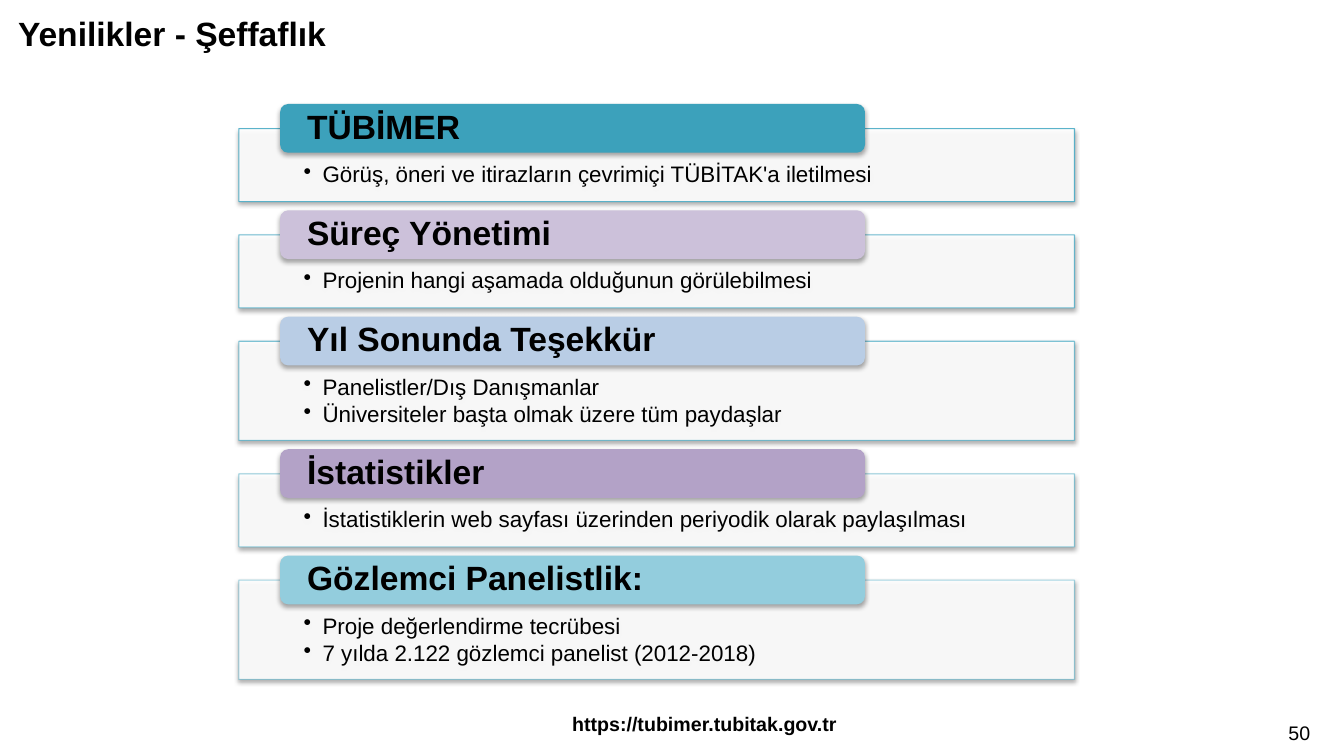
"""Build the transparency slide: five headed panels under a title."""
from lxml import etree
from pptx import Presentation
from pptx.dml.color import RGBColor
from pptx.enum.shapes import MSO_SHAPE
from pptx.enum.text import MSO_ANCHOR, MSO_AUTO_SIZE, PP_ALIGN
from pptx.oxml.ns import qn
from pptx.util import Cm, Pt

TITLE = "Yenilikler - Şeffaflık"
ADDRESS = "https://tubimer.tubitak.gov.tr"
PAGE = "50"
SECTIONS = [
    ("TÜBİMER", "teal", ["Görüş, öneri ve itirazların çevrimiçi TÜBİTAK'a iletilmesi"]),
    ("Süreç Yönetimi", "lilac", ["Projenin hangi aşamada olduğunun görülebilmesi"]),
    ("Yıl Sonunda Teşekkür", "sky", [
        "Panelistler/Dış Danışmanlar",
        "Üniversiteler başta olmak üzere tüm paydaşlar",
    ]),
    ("İstatistikler", "purple", [
        "İstatistiklerin web sayfası üzerinden periyodik olarak paylaşılması",
    ]),
    ("Gözlemci Panelistlik:", "aqua", [
        "Proje değerlendirme tecrübesi",
        "7 yılda 2.122 gözlemci panelist (2012-2018)",
    ]),
]
COLORS = {
    "text": "000000", "panel": "FFFFFF", "outline": "4BACC6",
    "teal": "3CA1BB", "lilac": "CCC1DA", "sky": "B9CDE5",
    "purple": "B3A2C7", "aqua": "93CDDD",
}
FIRST_TOP, PANEL_GAP = 3.24, 0.84
PANEL_LEFT, PANEL_WIDTH = 6.02, 21.06
PANEL_BASE, LINE_HEIGHT = 1.18, 0.66
TAB_LEFT, TAB_WIDTH, TAB_HEIGHT, TAB_RISE = 7.06, 14.74, 1.23, 0.62


def color(name):
    return RGBColor.from_string(COLORS[name])


def style(paragraph, size, bold=False, align=PP_ALIGN.LEFT):
    paragraph.alignment = align
    font = paragraph.font
    font.name, font.size, font.bold = "Arial", Pt(size), bold
    font.color.rgb = color("text")


def set_margins(frame, left, top, right, bottom):
    frame.margin_left, frame.margin_top = Cm(left), Cm(top)
    frame.margin_right, frame.margin_bottom = Cm(right), Cm(bottom)


def set_alpha(fill, percent):
    srgb = fill._xPr.find(qn("a:solidFill")).find(qn("a:srgbClr"))
    etree.SubElement(srgb, qn("a:alpha"), val=str(percent * 1000))


def add_shadow(shape):
    shape.shadow.inherit = False
    effects = shape._element.spPr.find(qn("a:effectLst"))
    shadow = etree.SubElement(effects, qn("a:outerShdw"), blurRad="40000", dist="23000",
                              dir="5400000", rotWithShape="0")
    black = etree.SubElement(shadow, qn("a:srgbClr"), val=COLORS["text"])
    etree.SubElement(black, qn("a:alpha"), val="35000")


def add_block(slide, preset, box, fill):
    block = slide.shapes.add_shape(preset, *map(Cm, box))
    add_shadow(block)
    block.fill.solid()
    block.fill.fore_color.rgb = color(fill)
    block.text_frame.word_wrap = True
    return block


def add_bullet(paragraph):
    properties = paragraph._p.get_or_add_pPr()
    properties.set("marL", str(Cm(0.48)))
    properties.set("indent", str(-Cm(0.48)))
    etree.SubElement(properties, qn("a:buChar"), char="•")


def add_panel(slide, top, height, points, line_alpha):
    panel = add_block(slide, MSO_SHAPE.RECTANGLE,
                      (PANEL_LEFT, top, PANEL_WIDTH, height), "panel")
    set_alpha(panel.fill, 90)
    panel.line.color.rgb = color("outline")
    panel.line.width = Pt(0.75)
    set_alpha(panel.line.fill, line_alpha)
    frame = panel.text_frame
    frame.vertical_anchor = MSO_ANCHOR.TOP
    set_margins(frame, 1.63, 0.87, 1.63, 0.3)
    frame.text = "\n".join(points)
    for point in frame.paragraphs:
        add_bullet(point)
        style(point, 16)
        point.line_spacing = 0.9
        point.space_after = Pt(2.4)


def add_tab(slide, top, heading, fill):
    tab = add_block(slide, MSO_SHAPE.ROUNDED_RECTANGLE,
                    (TAB_LEFT, top, TAB_WIDTH, TAB_HEIGHT), fill)
    tab.line.fill.background()
    frame = tab.text_frame
    frame.vertical_anchor = MSO_ANCHOR.MIDDLE
    set_margins(frame, 0.62, 0, 0.62, 0)
    frame.text = heading
    style(frame.paragraphs[0], 24, bold=True)
    frame.paragraphs[0].line_spacing = 0.9


def add_label(slide, box, text, bold, align, wrap):
    frame = slide.shapes.add_textbox(*map(Cm, box)).text_frame
    frame.word_wrap = wrap
    frame.text = text
    style(frame.paragraphs[0], 14, bold, align)


def main():
    deck = Presentation()
    deck.slide_width, deck.slide_height = Cm(33.87), Cm(19.05)
    slide = deck.slides.add_slide(deck.slide_layouts[5])

    title = slide.shapes.title
    title.left, title.top, title.width, title.height = map(Cm, (0.2, 0, 29.21, 1.68))
    title.text_frame.text = TITLE
    title.text_frame.auto_size = MSO_AUTO_SIZE.NONE
    title.text_frame.vertical_anchor = MSO_ANCHOR.MIDDLE
    style(title.text_frame.paragraphs[0], 24, bold=True)

    top = FIRST_TOP
    for index, (heading, fill, points) in enumerate(SECTIONS):
        height = PANEL_BASE + LINE_HEIGHT * len(points)
        add_panel(slide, top, height, points, 90 - 10 * index)
        add_tab(slide, top - TAB_RISE, heading, fill)
        top += height + PANEL_GAP

    add_label(slide, (14.17, 17.81, 7.34, 0.86), ADDRESS, True, PP_ALIGN.LEFT, False)
    add_label(slide, (26.31, 18.03, 6.96, 1.02), PAGE, False, PP_ALIGN.RIGHT, True)
    deck.save("out.pptx")


if __name__ == "__main__":
    main()
